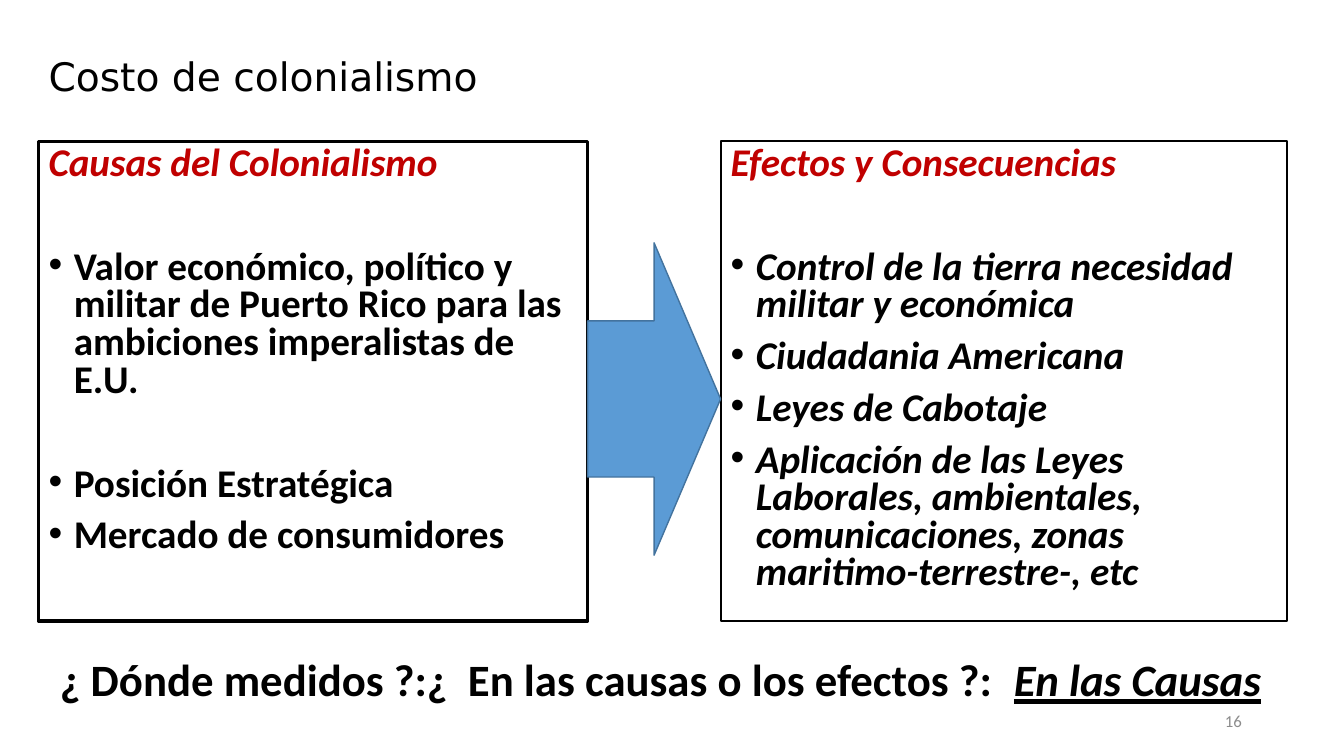
from lxml.etree import SubElement
from pptx import Presentation
from pptx.dml.color import RGBColor
from pptx.enum.shapes import MSO_SHAPE as SHAPE
from pptx.enum.text import MSO_ANCHOR as ANCHOR, MSO_AUTO_SIZE as AUTO, PP_ALIGN as ALIGN
from pptx.oxml.ns import qn
from pptx.util import Cm, Pt

# Content
TITLE = "Costo de colonialismo"
# Each item: text, whether a wide gap precedes it
CAUSES = [
    ("Valor económico, político y militar de Puerto Rico para las "
     "ambiciones imperalistas de E.U.", True),
    ("Posición Estratégica", True),
    ("Mercado de consumidores", False),
]
EFFECTS = [
    ("Control de la tierra necesidad militar y económica", True),
    ("Ciudadania Americana", False),
    ("Leyes de Cabotaje", False),
    ("Aplicación de las Leyes Laborales, ambientales, comunicaciones, "
     "zonas maritimo-terrestre-, etc", False),
]
# Each column: heading, items, left, width, border points, italic items
COLUMNS = [
    ("Causas del Colonialismo", CAUSES, 0.97, 13.84, 2.25, False),
    ("Efectos y Consecuencias", EFFECTS, 18.16, 14.27, 1.5, True),
]
QUESTION = "¿ Dónde medidos ?:¿  En las causas o los efectos ?:  "
ANSWER = "En las Causas"
PAGE = "16"

# Layout, in centimetres
LEFT, BOX_TOP, BOX_H = 0.97, 3.56, 12.09
ARROW_H = 7.87
ARROW_TOP = 6.12
GAP, WIDE_GAP = 10, 47.3
HANG = 0.635


def rgb(value):
    return RGBColor.from_string(value)


def place(sp, left, top, width, height):
    sp.left, sp.top, sp.width, sp.height = Cm(left), Cm(top), Cm(width), Cm(height)


def style(r, size, color="000000", bold=False, italic=False, font="Calibri"):
    f = r.font
    f.name, f.size, f.bold, f.italic = font, Pt(size), bold, italic
    f.color.rgb = rgb(color)


def list_line(p, text, gap, bullet, color, italic):
    p.text = text
    p.alignment = ALIGN.LEFT
    p.line_spacing, p.space_before = 0.8, Pt(gap)
    style(p.runs[0], 28, color, True, italic)
    pPr = p._p.get_or_add_pPr()
    hang = Cm(HANG) if bullet else 0
    pPr.set("marL", str(hang))
    pPr.set("indent", str(-hang))
    if bullet:
        SubElement(pPr, qn("a:buFont"), typeface="Arial")
        SubElement(pPr, qn("a:buChar"), char="•")
    else:
        SubElement(pPr, qn("a:buNone"))


prs = Presentation()
prs.slide_width, prs.slide_height = Cm(33.87), Cm(19.05)
slide = prs.slides.add_slide(prs.slide_layouts[3])

# Title
title = slide.shapes.title
place(title, LEFT, 1.02, 30.58, 1.93)
tf = title.text_frame
tf.text = TITLE
tf.auto_size, tf.vertical_anchor = AUTO.NONE, ANCHOR.MIDDLE
tf.paragraphs[0].alignment = ALIGN.LEFT
tf.paragraphs[0].line_spacing = 0.9
style(tf.paragraphs[0].runs[0], 28, font="DejaVu Sans")

# Causes and effects
for i, (heading, items, left, width, border, italic) in enumerate(COLUMNS, 1):
    box = slide.placeholders[i]
    place(box, left, BOX_TOP, width, BOX_H)
    box.line.color.rgb, box.line.width = rgb("000000"), Pt(border)
    tf = box.text_frame
    tf.auto_size, tf.vertical_anchor = AUTO.NONE, ANCHOR.TOP
    list_line(tf.paragraphs[0], heading, GAP, False, "C00000", True)
    for text, wide in items:
        gap = WIDE_GAP if wide else GAP
        list_line(tf.add_paragraph(), text, gap, True, "000000", italic)

# Arrow spanning the space between the boxes
arrow_left = COLUMNS[0][2] + COLUMNS[0][3]
arrow = slide.shapes.add_shape(
    SHAPE.RIGHT_ARROW, Cm(arrow_left), Cm(ARROW_TOP),
    Cm(COLUMNS[1][2] - arrow_left), Cm(ARROW_H))
arrow.shadow.inherit = False
arrow.fill.solid()
arrow.fill.fore_color.rgb = rgb("5B9BD5")
arrow.line.color.rgb, arrow.line.width = rgb("43739E"), Pt(1)

# Closing question
sp = slide.shapes.add_textbox(Cm(LEFT), Cm(16.31), Cm(32.03), Cm(1.63))
tf = sp.text_frame
tf.word_wrap = True
tf.margin_left = Cm(0.54)
p = tf.paragraphs[0]
for text, is_answer in ((QUESTION, False), (ANSWER, True)):
    r = p.add_run()
    r.text = text
    style(r, 32, bold=True, italic=is_answer)
    r.font.underline = is_answer

# Slide number
sp = slide.shapes.add_textbox(Cm(23.93), Cm(17.65), Cm(7.62), Cm(1.02))
tf = sp.text_frame
tf.text = PAGE
tf.word_wrap, tf.vertical_anchor = True, ANCHOR.MIDDLE
tf.paragraphs[0].alignment = ALIGN.RIGHT
style(tf.paragraphs[0].runs[0], 12, "8C8C8C")

prs.save("out.pptx")
